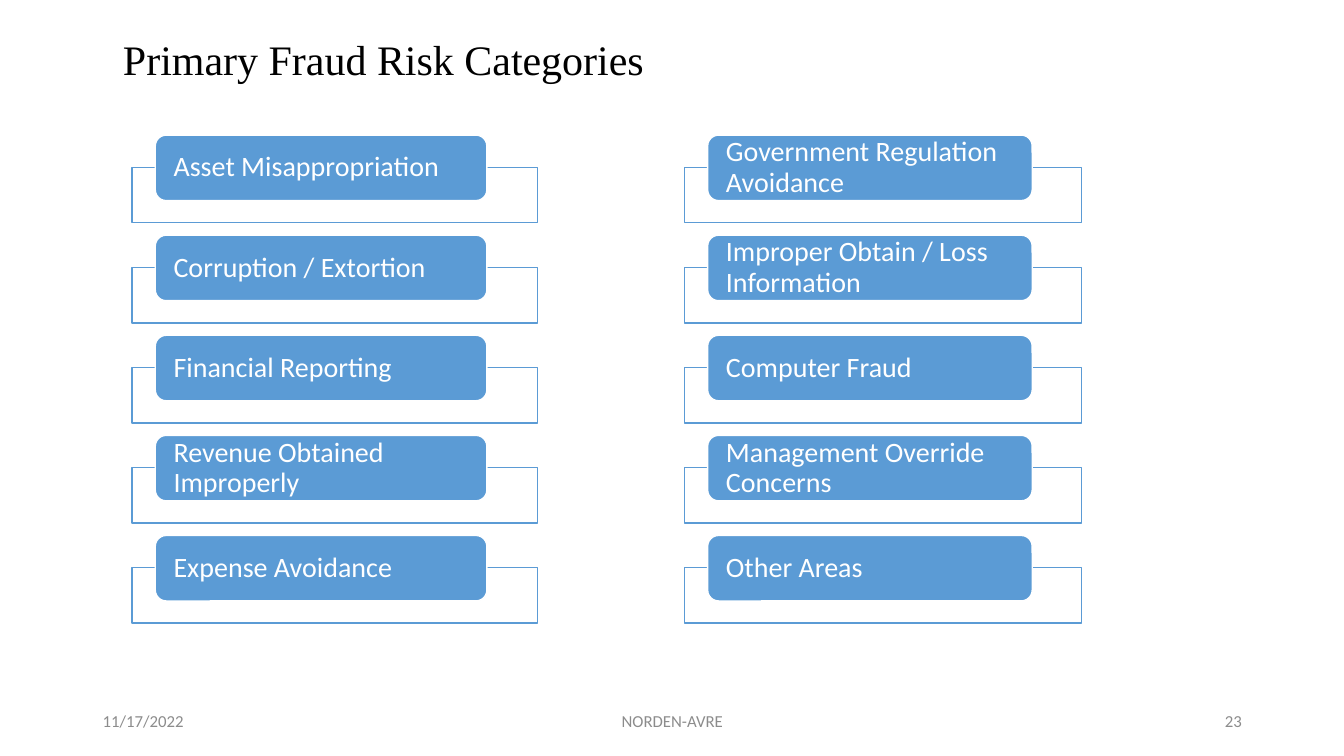
import dataclasses

import lxml.etree
import pptx
import pptx.dml.color
import pptx.enum.shapes
import pptx.enum.text
import pptx.oxml.ns
import pptx.util

ALIGN = pptx.enum.text.PP_ALIGN
PRESET = pptx.enum.shapes.MSO_SHAPE

COLORS = {"blue": "5B9BD5", "white": "FFFFFF", "black": "000000", "gray": "8C8C8C"}

# Grid: ten columns and ten rows to the inch
CELL = pptx.util.Inches(0.1)
SLIDE_COLUMNS, SLIDE_ROWS = 133.33, 75
FIRST_ROW, ROW_PITCH = 13.4, 9.93
TAB_HEIGHT, PANEL_HEIGHT = 6.5, 5.5
TAB_INDENT, PANEL_DROP = 2.3, 3.2
FOOTER_ROW, FOOTER_HEIGHT = 69.5, 4


@dataclasses.dataclass(frozen=True)
class Area:
    column: float
    row: float
    width: float
    height: float

    def lengths(self) -> list[int]:
        values = (self.column, self.row, self.width, self.height)
        return [round(value * CELL) for value in values]


@dataclasses.dataclass(frozen=True)
class CategoryList:
    column: float
    panel_width: float
    tab_width: float
    categories: tuple[str, ...]


@dataclasses.dataclass(frozen=True)
class FooterItem:
    column: float
    width: float
    text: str
    align: ALIGN


CATEGORY_LISTS = (
    CategoryList(13.1, 40.2, 32.9, (
        "Asset Misappropriation",
        "Corruption / Extortion",
        "Financial Reporting",
        "Revenue Obtained Improperly",
        "Expense Avoidance",
    )),
    CategoryList(67.9, 39.4, 32.2, (
        "Government Regulation Avoidance",
        "Improper Obtain / Loss Information",
        "Computer Fraud",
        "Management Override Concerns",
        "Other Areas",
    )),
)

FOOTER_ITEMS = (
    FooterItem(9.2, 30, "11/17/2022", ALIGN.LEFT),
    FooterItem(44.2, 45, "NORDEN-AVRE", ALIGN.CENTER),
    FooterItem(94.2, 30, "23", ALIGN.RIGHT),
)


def rgb(name: str) -> pptx.dml.color.RGBColor:
    return pptx.dml.color.RGBColor.from_string(COLORS[name])


def write(box, text: str, size: float, color: str, font: str = "Calibri",
          align: ALIGN = ALIGN.LEFT, spacing: float = 1.0, **margins: int) -> None:
    """Fill the box with one formatted paragraph."""
    frame = box.text_frame
    frame_format = {
        "word_wrap": True,
        "auto_size": pptx.enum.text.MSO_AUTO_SIZE.NONE,
        "vertical_anchor": pptx.enum.text.MSO_ANCHOR.MIDDLE,
        **margins,
    }
    for name, value in frame_format.items():
        setattr(frame, name, value)
    para = frame.paragraphs[0]
    for name, value in {"alignment": align, "line_spacing": spacing}.items():
        setattr(para, name, value)
    span = para.add_run()
    span.text = text
    for name, value in {"name": font, "size": pptx.util.Pt(size)}.items():
        setattr(span.font, name, value)
    span.font.color.rgb = rgb(color)


def add_box(shapes, preset: PRESET, area: Area, fill: str, line: str):
    box = shapes.add_shape(preset, *area.lengths())
    box.shadow.inherit = False
    box.fill.solid()
    box.fill.fore_color.rgb = rgb(fill)
    box.line.color.rgb = rgb(line)
    box.line.width = pptx.util.Pt(1)
    return box


def set_opacity(box, percent: int) -> None:
    color = box.fill._xPr.find(".//" + pptx.oxml.ns.qn("a:srgbClr"))
    alpha = lxml.etree.SubElement(color, pptx.oxml.ns.qn("a:alpha"))
    alpha.set("val", str(percent * 1000))


def add_category_list(page, entry: CategoryList) -> None:
    shapes = page.shapes.add_group_shape().shapes
    for index, category in enumerate(entry.categories):
        row = FIRST_ROW + index * ROW_PITCH
        panel_area = Area(entry.column, row + PANEL_DROP, entry.panel_width, PANEL_HEIGHT)
        panel = add_box(shapes, PRESET.RECTANGLE, panel_area, "white", "blue")
        set_opacity(panel, 90)
        tab_area = Area(entry.column + TAB_INDENT, row, entry.tab_width, TAB_HEIGHT)
        tab = add_box(shapes, PRESET.ROUNDED_RECTANGLE, tab_area, "blue", "white")
        side = round(1.5 * CELL)
        write(tab, category, 20, "white", spacing=0.9, margin_left=side,
              margin_right=side, margin_top=0, margin_bottom=0)


def add_title(page, text: str) -> None:
    title = page.shapes.title
    names = ("left", "top", "width", "height")
    for name, value in zip(names, Area(11.2, 3, 101.3, 6.2).lengths()):
        setattr(title, name, value)
    write(title, text, 30, "black", font="Times New Roman", spacing=0.9)


def add_footer_item(page, item: FooterItem) -> None:
    area = Area(item.column, FOOTER_ROW, item.width, FOOTER_HEIGHT)
    box = page.shapes.add_textbox(*area.lengths())
    write(box, item.text, 12, "gray", align=item.align)


def main() -> None:
    deck = pptx.Presentation()
    deck.slide_width = round(SLIDE_COLUMNS * CELL)
    deck.slide_height = round(SLIDE_ROWS * CELL)
    page = deck.slides.add_slide(deck.slide_layouts.get_by_name("Title Only"))

    # Title
    add_title(page, "Primary Fraud Risk Categories")

    # Category columns
    for entry in CATEGORY_LISTS:
        add_category_list(page, entry)

    # Footer
    for item in FOOTER_ITEMS:
        add_footer_item(page, item)

    deck.save("out.pptx")


if __name__ == "__main__":
    main()
